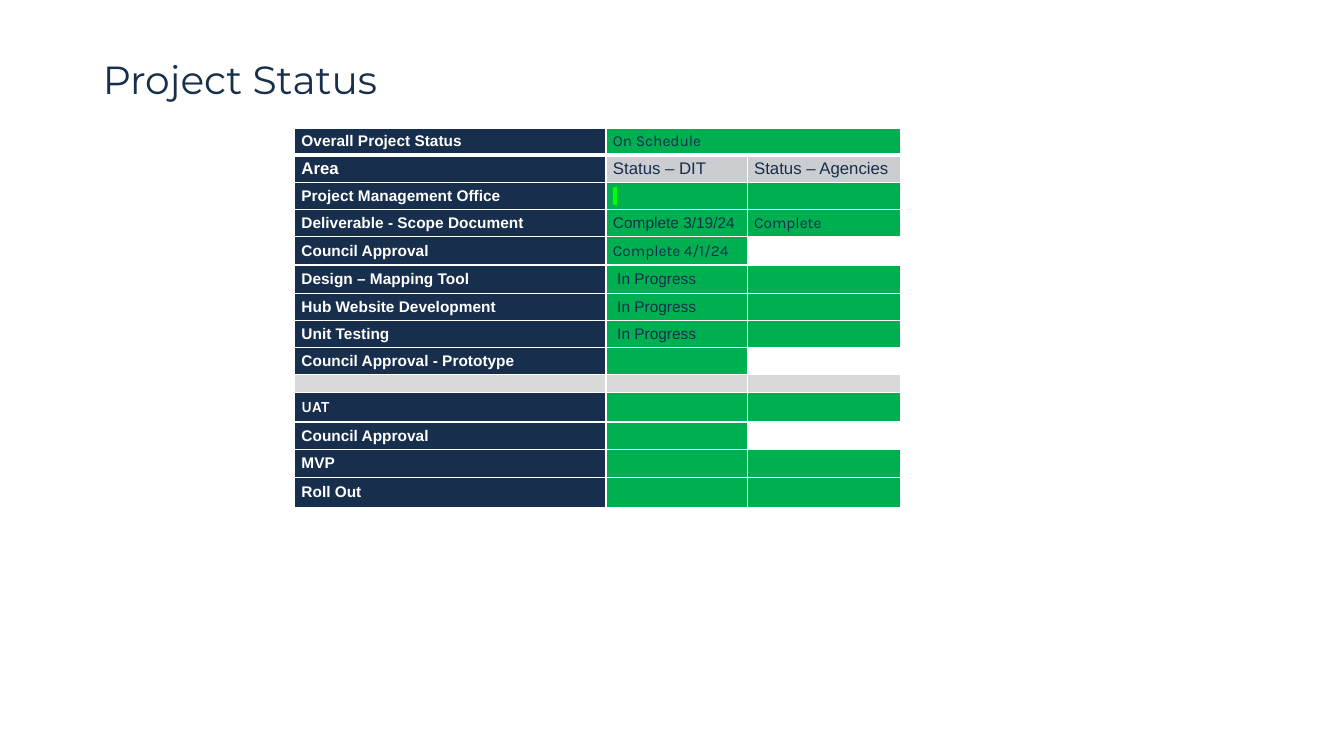
from lxml import etree
from pptx import Presentation
from pptx.dml.color import RGBColor
from pptx.enum.text import MSO_ANCHOR
from pptx.oxml import parse_xml
from pptx.oxml.ns import nsdecls, qn
from pptx.util import Inches, Pt

NAVY = RGBColor(0x17, 0x2E, 0x4C)
GREEN = RGBColor(0x00, 0xB0, 0x50)
HEADER_GRAY = RGBColor(0xCC, 0xCD, 0xD0)
SPACER_GRAY = RGBColor(0xD9, 0xD9, 0xD9)
WHITE = RGBColor(0xFF, 0xFF, 0xFF)
LIME = RGBColor(0x00, 0xFF, 0x00)

COLUMN_WIDTHS = (3.09, 1.4, 1.52)
HEADER_ROW, SPACER_ROW = 1, 9
# Row height, area, status of DIT, status of the agencies
ROWS = [
    (0.27, "Overall Project Status", "On Schedule", ""),
    (0.27, "Area", "Status – DIT", "Status – Agencies"),
    (0.27, "Project Management Office", " ", ""),
    (0.27, "Deliverable - Scope Document", "Complete 3/19/24", "Complete"),
    (0.28, "Council Approval", "Complete 4/1/24", ""),
    (0.28, "Design – Mapping Tool", " In Progress", ""),
    (0.27, "Hub Website Development", " In Progress", ""),
    (0.27, "Unit Testing", " In Progress", ""),
    (0.27, "Council Approval - Prototype", "", ""),
    (0.18, "", "", ""),
    (0.29, "UAT", "", ""),
    (0.27, "Council Approval", "", ""),
    (0.28, "MVP", "", ""),
    (0.3, "Roll Out", "", ""),
]
KARLA_CELLS = {(0, 1), (3, 2), (4, 1), (10, 0)}
NOT_APPLICABLE_CELLS = {(4, 2), (8, 2), (11, 2)}
HIGHLIGHTED_CELL = (2, 1)


def cell_color(row, column):
    if row == SPACER_ROW:
        return SPACER_GRAY
    if column == 0:
        return NAVY
    if row == HEADER_ROW:
        return HEADER_GRAY
    return WHITE if (row, column) in NOT_APPLICABLE_CELLS else GREEN


def add_borders(cell, row):
    """White rules, with a heavier one under the first row."""
    widths = {"L": 1, "R": 1, "T": 3 if row == 1 else 1, "B": 3 if row == 0 else 1}
    properties = cell._tc.get_or_add_tcPr()
    for side, width in widths.items():
        properties.append(parse_xml(
            f'<a:ln{side} {nsdecls("a")} w="{Pt(width)}"><a:solidFill>'
            f'<a:srgbClr val="{WHITE}"/></a:solidFill></a:ln{side}>'))


def highlight(span, color):
    span.font.color.rgb = NAVY
    mark = etree.Element(qn("a:highlight"))
    etree.SubElement(mark, qn("a:srgbClr"), val=str(color))
    span.font._element.find(qn("a:solidFill")).addnext(mark)


def format_cell(cell, row, column, text):
    add_borders(cell, row)
    cell.fill.solid()
    cell.fill.fore_color.rgb = cell_color(row, column)
    cell.margin_left = cell.margin_right = Inches(0.07)
    cell.margin_top = cell.margin_bottom = 0
    cell.vertical_anchor = MSO_ANCHOR.MIDDLE
    para = cell.text_frame.paragraphs[0]
    font = para.font
    font.name = "Karla" if (row, column) in KARLA_CELLS else "Arial"
    font.bold = column == 0
    font.color.rgb = WHITE if column == 0 else NAVY
    if not text:
        font.size = Pt(6)
        return
    font.size = Pt(12 if row == HEADER_ROW else 11)
    span = para.add_run()
    span.text = text
    if (row, column) == HIGHLIGHTED_CELL:
        highlight(span, LIME)
        span.font.size = Pt(11)


def add_title(page, text):
    title = page.shapes.title
    title.left, title.top = Inches(0.92), Inches(0.55)
    title.width, title.height = Inches(11.5), Inches(0.61)
    title.text_frame.text = text
    title.text_frame.vertical_anchor = MSO_ANCHOR.TOP
    para = title.text_frame.paragraphs[0]
    para.alignment = 1
    para.line_spacing = 0.9
    para.font.name = "Montserrat"
    para.font.size = Pt(28)
    para.font.color.rgb = NAVY


def add_status_table(page):
    height = sum(row[0] for row in ROWS)
    frame = page.shapes.add_table(
        len(ROWS), len(COLUMN_WIDTHS), Inches(2.92), Inches(1.27),
        Inches(sum(COLUMN_WIDTHS)), Inches(height))
    table = frame.table
    table.first_row = table.horz_banding = False
    for column, width in zip(table.columns, COLUMN_WIDTHS):
        column.width = Inches(width)
    for row, (row_height, *texts) in enumerate(ROWS):
        table.rows[row].height = Inches(row_height)
        for column, text in enumerate(texts):
            format_cell(table.cell(row, column), row, column, text)
    table.cell(0, 1).merge(table.cell(0, 2))


def main():
    deck = Presentation()
    deck.slide_width, deck.slide_height = Inches(13.33), Inches(7.5)
    page = deck.slides.add_slide(deck.slide_layouts.get_by_name("Title Only"))
    add_title(page, "Project Status")
    add_status_table(page)
    deck.save("out.pptx")


if __name__ == "__main__":
    main()
